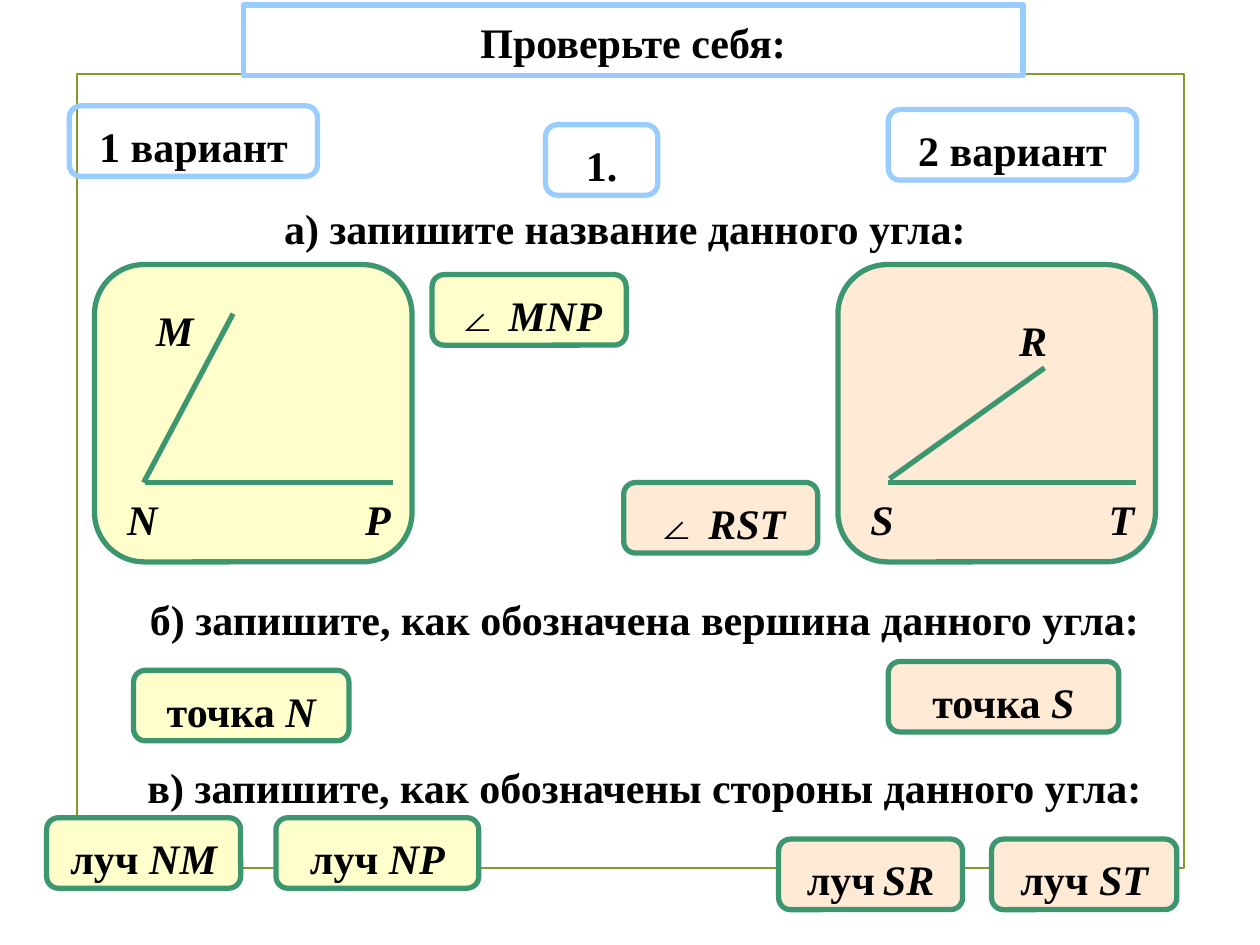
from dataclasses import dataclass

from lxml import etree
from pptx import Presentation
from pptx.dml.color import RGBColor
from pptx.enum import shapes as kinds, text as txt
from pptx.oxml import ns
from pptx.util import Inches, Pt


@dataclass(frozen=True)
class Theme:
    font: str = "Times New Roman"
    size: float = 24
    small: float = 18
    ink: str = "000000"
    frame: str = "83992A"
    head: str = "99CCFF"
    edge: str = "3C9770"
    lemon: str = "FFFFCC"
    peach: str = "FFEAD5"
    thin: float = 1.25
    thick: float = 3


T = Theme()
ROUND = kinds.MSO_SHAPE.ROUNDED_RECTANGLE
LEFT, MID = txt.PP_ALIGN.LEFT, txt.PP_ALIGN.CENTER


def rgb(code):
    return RGBColor.from_string(code)


def write(shape, runs, align=MID):
    """Fill a shape with runs given as (words, italic)."""
    frame = shape.text_frame
    frame.word_wrap = True
    frame.auto_size = txt.MSO_AUTO_SIZE.NONE
    frame.vertical_anchor = txt.MSO_ANCHOR.TOP
    frame.margin_top = Inches(0.09)
    para = frame.paragraphs[0]
    para.alignment = align
    for words, slant in runs:
        run = para.add_run()
        run.text = words
        font = run.font
        font.name, font.size = T.font, Pt(T.size)
        font.bold, font.italic = True, slant
        font.color.rgb = rgb(T.ink)


def style(shape, line, width=T.thick, fill=None):
    shape.shadow.inherit = False
    if fill:
        shape.fill.solid()
        shape.fill.fore_color.rgb = rgb(fill)
    else:
        shape.fill.background()
    shape.line.color.rgb = rgb(line)
    shape.line.width = Pt(width)


def box(home, at, line, fill=None, runs=()):
    shape = home.add_shape(ROUND, *map(Inches, at))
    style(shape, line, fill=fill)
    if runs:
        write(shape, runs)
    return shape


def label(home, at, words, slant=False, align=MID):
    write(home.add_textbox(*map(Inches, at)), [(words, slant)], align)


def ray(home, start, end):
    line = home.add_connector(kinds.MSO_CONNECTOR.STRAIGHT,
                              *map(Inches, start + end))
    line.line.color.rgb = rgb(T.edge)
    line.line.width = Pt(T.thick)
    etree.SubElement(line._element.spPr, ns.qn("a:effectLst"))


def title(slide, at, words):
    """Give the title placeholder a rounded outline."""
    shape = slide.shapes.title
    shape.left, shape.top, shape.width, shape.height = map(Inches, at)
    geom = etree.SubElement(shape._element.spPr, ns.qn("a:prstGeom"),
                            prst="roundRect")
    etree.SubElement(geom, ns.qn("a:avLst"))
    style(shape, T.head)
    write(shape, [(words, False)])


def angle(slide, left, fill, names, tip, start, spot):
    """Draw a card with an angle; names run tip, vertex, end."""
    home = slide.shapes.add_group_shape().shapes
    box(home, (left, 2.1, 2.52, 2.36), T.edge, fill)
    ray(home, tip, start)
    ray(home, (left + 0.4, 3.83), (left + 2.37, 3.83))
    places = (spot + (0.79, 0.5), (left + 0.16, 3.83, 0.55, 0.5),
              (left + 2.05, 3.83, 0.55, 0.5))
    for at, name in zip(places, names):
        label(home, at, name, True, LEFT)


def answer(home, at, fill, lead, name):
    return box(home, at, T.edge, fill, [(lead, False), (name, True)])


def main():
    deck = Presentation()
    deck.slide_width, deck.slide_height = Inches(10), Inches(7.5)
    slide = deck.slides.add_slide(deck.slide_layouts[5])
    home = slide.shapes

    # Frame, kept behind everything
    frame = home.add_shape(kinds.MSO_SHAPE.RECTANGLE,
                           *map(Inches, (0.61, 0.59, 8.79, 6.3)))
    style(frame, T.frame, T.thin)
    home._spTree.insert(2, frame._element)

    # Headings
    title(slide, (1.93, 0.04, 6.19, 0.56), "Проверьте себя:")
    for left, top, width, words in ((0.55, 0.84, 1.97, "1 вариант"),
                                    (7.05, 0.87, 1.97, "2 вариант"),
                                    (4.33, 0.99, 0.89, "1.")):
        box(home, (left, top, width, 0.56), T.head, runs=[(words, False)])

    # Questions
    for left, top, width, words in (
            (1.93, 1.52, 6.06, "а) запишите название данного угла:"),
            (0.9, 4.62, 8.43,
             "б) запишите, как обозначена вершина данного угла:"),
            (0.9, 5.95, 8.43,
             "в) запишите, как обозначены стороны данного угла:")):
        label(home, (left, top, width, 0.5), words)

    # Angles
    angle(slide, 0.75, T.lemon, "MNP", (1.85, 2.49), (1.14, 3.83),
          (1.14, 2.33))
    angle(slide, 6.65, T.peach, "RST", (8.29, 2.92), (7.06, 3.8),
          (7.99, 2.41))

    # Names and vertices
    for left, top, width, fill, lead, name in (
            (3.43, 2.18, 1.54, T.lemon, "∠ ", "MNP"),
            (4.95, 3.83, 1.54, T.peach, "∠ ", "RST"),
            (1.06, 5.32, 1.71, T.lemon, "точка ", "N"),
            (7.05, 5.25, 1.83, T.peach, "точка ", "S")):
        answer(home, (left, top, width, 0.56), fill, lead, name)

    # Sides, one group for each variant
    for top, fill, sides in (
            (6.49, T.lemon, ((0.37, 1.54, "NM"), (2.19, 1.61, "NP"))),
            (6.66, T.peach, ((6.18, 1.46, "SR"), (7.87, 1.47, "ST")))):
        pair = home.add_group_shape().shapes
        for left, width, name in sides:
            at = (left, top, width, 0.56)
            if name == "SR":
                # This answer has a narrower space
                shape = box(pair, at, T.edge, fill,
                            [("луч", False), (" ", False), (name, True)])
                gap = shape.text_frame.paragraphs[0].runs[1].font
                gap.size, gap.bold = Pt(T.small), False
            else:
                answer(pair, at, fill, "луч ", name)

    deck.save("out.pptx")


if __name__ == "__main__":
    main()
